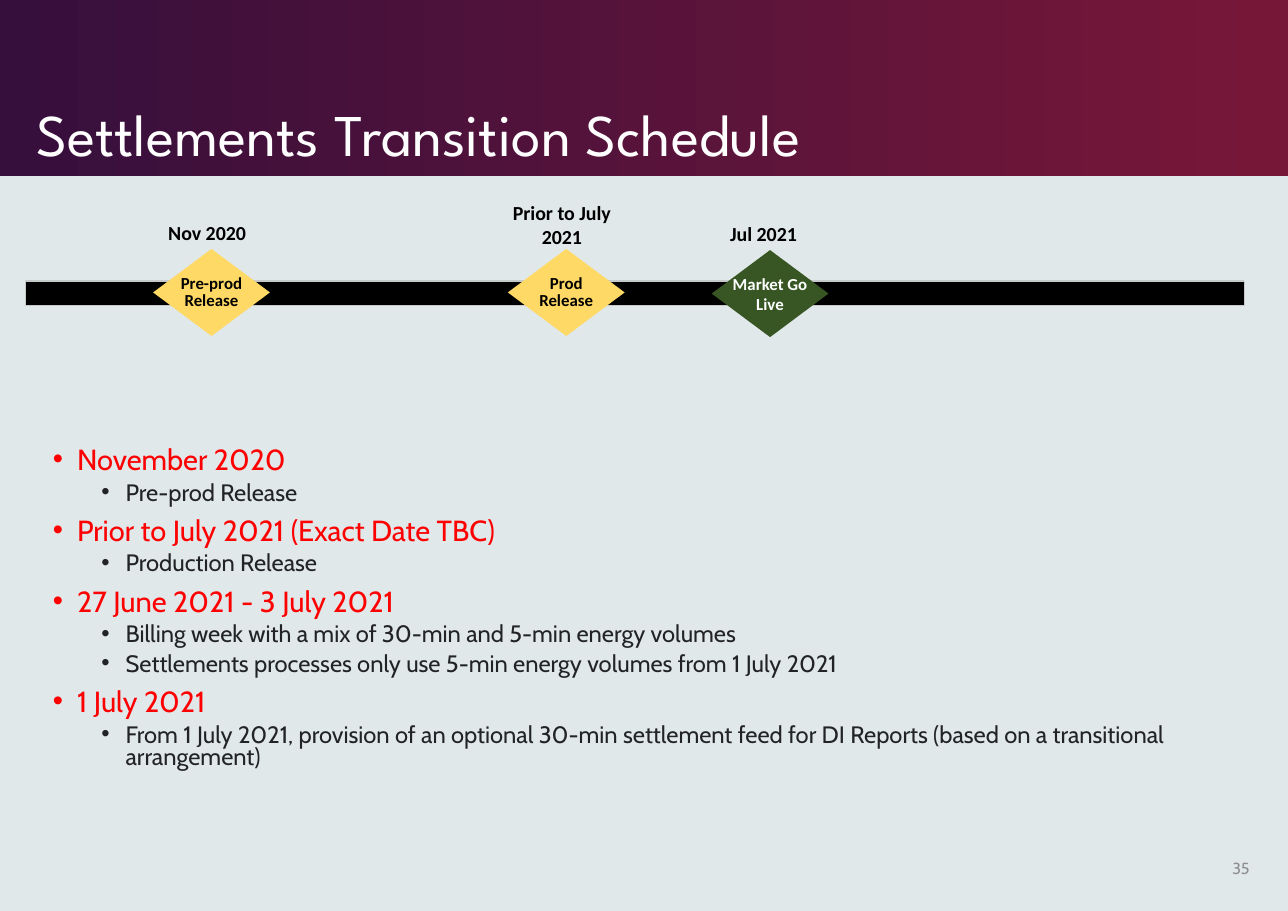
from dataclasses import dataclass

from pptx import Presentation
from pptx.dml.color import RGBColor
from pptx.enum.shapes import MSO_SHAPE as Shape
from pptx.enum.text import MSO_ANCHOR as Anchor, MSO_AUTO_SIZE as AutoSize, PP_ALIGN as Align
from pptx.oxml.ns import qn
from pptx.util import Emu, Pt

EMU_PER_PX = 9144  # 100 px to the inch


@dataclass(frozen=True)
class Theme:
    background: str = "E0E8EA"
    band_start: str = "360F3C"
    band_end: str = "771738"
    white: str = "FFFFFF"
    black: str = "000000"
    bar_edge: str = "C8C8C8"
    release: str = "FFD965"
    go_live: str = "375623"
    go_live_text: str = "FEFFFF"
    heading: str = "FF0000"
    detail: str = "222324"
    page: str = "8D8D8E"
    title_font: str = "League Spartan"
    body_font: str = "Cabin"
    label_font: str = "Calibri"
    title_size: float = 38.6
    heading_size: float = 19
    detail_size: float = 15.5
    caption_size: float = 13
    label_size: float = 11
    page_size: float = 10.5


@dataclass(frozen=True)
class Box:
    left: int
    top: int
    width: int
    height: int


@dataclass(frozen=True)
class Milestone:
    caption: str
    caption_box: Box
    label: str
    diamond: Box
    fill: str
    text_color: str
    line_pitch: float


@dataclass(frozen=True)
class BulletLevel:
    indent: int
    size: float
    color: str
    space_before: float


THEME = Theme()
HANGING = 22
HEADING = BulletLevel(22, THEME.heading_size, THEME.heading, 8.8)
DETAIL = BulletLevel(66, THEME.detail_size, THEME.detail, 4.4)

MILESTONES = [
    Milestone("Nov 2020", Box(128, 200, 120, 22), "Pre-prod\nRelease",
              Box(139, 226, 106, 79), THEME.release, THEME.black, 11.5),
    Milestone("Prior to July\n2021", Box(450, 182, 120, 44), "Prod\nRelease",
              Box(461, 226, 106, 79), THEME.release, THEME.black, 11.5),
    Milestone("Jul 2021", Box(633, 201, 120, 22), "Market Go\nLive",
              Box(646, 227, 106, 79), THEME.go_live, THEME.go_live_text, 13.5),
]

SCHEDULE = {
    "November 2020": ["Pre-prod Release"],
    "Prior to July 2021 (Exact Date TBC)": ["Production Release"],
    "27 June 2021 - 3 July 2021": [
        "Billing week with a mix of 30-min and 5-min energy volumes",
        "Settlements processes only use 5-min energy volumes from 1 July 2021",
    ],
    "1 July 2021": [
        "From 1 July 2021, provision of an optional 30-min settlement feed for DI Reports "
        "(based on a transitional arrangement)",
    ],
}


def px(length: int) -> Emu:
    return Emu(length * EMU_PER_PX)


def edges(box: Box) -> list[Emu]:
    return [px(length) for length in (box.left, box.top, box.width, box.height)]


def apply(target, formats: dict) -> None:
    for name, value in formats.items():
        setattr(target, name, value)


def style_font(font, name: str, size: float, color: str, bold: bool = False) -> None:
    apply(font, {"name": name, "size": Pt(size), "bold": bold})
    font.color.rgb = RGBColor.from_string(color)


def place(shape, box: Box) -> None:
    apply(shape, dict(zip(("left", "top", "width", "height"), edges(box))))


def add_filled(slide, kind: Shape, box: Box, color: str):
    shape = slide.shapes.add_shape(kind, *edges(box))
    shape.shadow.inherit = False
    shape.fill.solid()
    shape.fill.fore_color.rgb = RGBColor.from_string(color)
    shape.line.fill.background()
    return shape


def write_label(shape, text: str, size: float, color: str, line_pitch: float | None = None) -> None:
    """Write centred bold lines that neither wrap nor keep a margin."""
    frame = shape.text_frame
    apply(frame, {"word_wrap": False, "margin_left": 0, "margin_right": 0,
                  "margin_top": 0, "margin_bottom": 0})
    frame.text = text
    for paragraph in frame.paragraphs:
        paragraph.alignment = Align.CENTER
        if line_pitch:
            paragraph.line_spacing = Pt(line_pitch)
        style_font(paragraph.font, THEME.label_font, size, color, bold=True)


def add_band(slide) -> None:
    """Put the gradient band behind the title placeholder."""
    band = add_filled(slide, Shape.RECTANGLE, Box(0, 0, 1169, 160), THEME.band_start)
    band.fill.gradient()
    band.fill.gradient_angle = 0
    stops = zip(band.fill.gradient_stops, (0, 0.99), (THEME.band_start, THEME.band_end))
    for stop, position, color in stops:
        stop.position = position
        stop.color.rgb = RGBColor.from_string(color)
    slide.shapes._spTree.insert(2, band._element)


def fill_title(slide) -> None:
    title = slide.shapes.title
    place(title, Box(23, 16, 863, 143))
    title.text = "Settlements Transition Schedule"
    apply(title.text_frame, {"auto_size": AutoSize.NONE, "vertical_anchor": Anchor.BOTTOM})
    paragraph = title.text_frame.paragraphs[0]
    apply(paragraph, {"alignment": Align.LEFT, "line_spacing": 0.9})
    style_font(paragraph.font, THEME.title_font, THEME.title_size, THEME.white)


def format_bullet(paragraph, level: BulletLevel, first: bool) -> None:
    properties = paragraph._p.get_or_add_pPr()
    properties.set("marL", str(px(level.indent)))
    properties.set("indent", str(px(-HANGING)))
    properties.makeelement
    for tag, name, value in (("a:buFont", "typeface", "Arial"), ("a:buChar", "char", "•")):
        element = properties.makeelement(qn(tag), {name: value})
        properties.append(element)
    apply(paragraph, {"line_spacing": 0.8, "space_before": Pt(0 if first else level.space_before)})
    style_font(paragraph.font, THEME.body_font, level.size, level.color)


def fill_schedule(slide) -> None:
    body = slide.placeholders[1]
    place(body, Box(38, 402, 1133, 315))
    frame = body.text_frame
    frame.auto_size = AutoSize.NONE
    entries = [(text, level)
               for heading, details in SCHEDULE.items()
               for text, level in [(heading, 0), *((detail, 1) for detail in details)]]
    frame.text = "\n".join(text for text, _ in entries)
    for index, (paragraph, (_, level)) in enumerate(zip(frame.paragraphs, entries)):
        paragraph.level = level
        format_bullet(paragraph, (HEADING, DETAIL)[level], first=index == 0)


def add_timeline(slide) -> None:
    bar = add_filled(slide, Shape.RECTANGLE, Box(23, 255, 1106, 22), THEME.black)
    bar.line.color.rgb = RGBColor.from_string(THEME.bar_edge)
    bar.line.width = Pt(0.25)
    for milestone in MILESTONES:
        diamond = add_filled(slide, Shape.DIAMOND, milestone.diamond, milestone.fill)
        diamond.text_frame.vertical_anchor = Anchor.MIDDLE
        write_label(diamond, milestone.label, THEME.label_size,
                    milestone.text_color, milestone.line_pitch)
        caption = slide.shapes.add_textbox(*edges(milestone.caption_box))
        write_label(caption, milestone.caption, THEME.caption_size, THEME.black)


def add_page_number(slide) -> None:
    frame = slide.shapes.add_textbox(*edges(Box(1089, 766, 55, 44))).text_frame
    apply(frame, {"text": "35", "word_wrap": True, "vertical_anchor": Anchor.MIDDLE})
    paragraph = frame.paragraphs[0]
    paragraph.alignment = Align.RIGHT
    style_font(paragraph.font, THEME.body_font, THEME.page_size, THEME.page)


def main() -> None:
    presentation = Presentation()
    apply(presentation, {"slide_width": px(1169), "slide_height": px(827)})
    slide = presentation.slides.add_slide(presentation.slide_layouts[1])
    slide.background.fill.solid()
    slide.background.fill.fore_color.rgb = RGBColor.from_string(THEME.background)
    add_band(slide)
    fill_title(slide)
    fill_schedule(slide)
    add_timeline(slide)
    add_page_number(slide)
    presentation.save("out.pptx")


if __name__ == "__main__":
    main()
